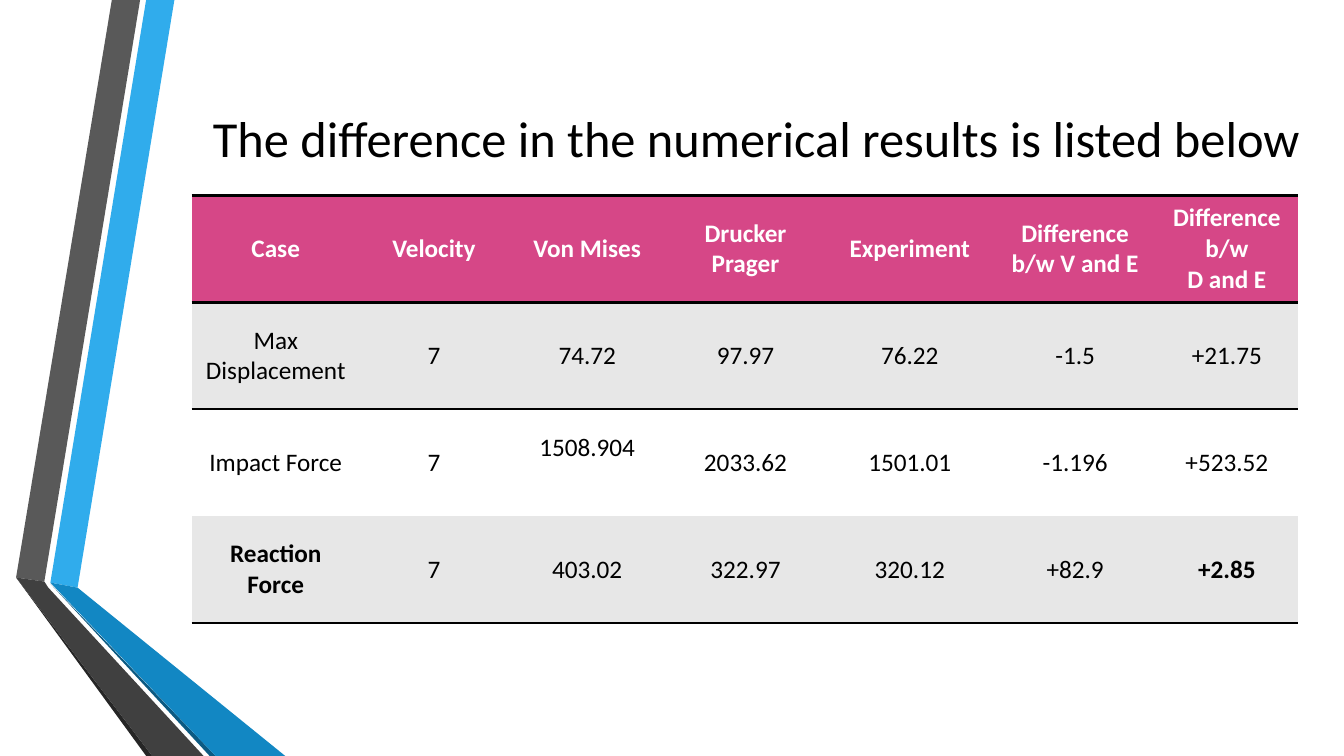
"""Build the slide comparing the numerical results of both models with the experiment."""
from dataclasses import dataclass

from lxml.etree import SubElement
from pptx import Presentation
from pptx.dml.color import RGBColor
from pptx.dml.fill import FillFormat
from pptx.enum.text import MSO_ANCHOR, MSO_AUTO_SIZE, PP_ALIGN
from pptx.oxml.ns import qn
from pptx.slide import Slide
from pptx.table import Table, _Cell
from pptx.text.text import _Paragraph
from pptx.util import Inches, Pt

FONT = "Calibri"
BLACK, WHITE, PINK, GREY = "000000", "FFFFFF", "D64787", "E7E7E7"
NO_GRID_STYLE = "{2D5ABB26-0587-4C30-8999-92F81FD0307C}"


@dataclass(frozen=True)
class Ribbon:
    color: str
    corners: tuple[tuple[float, float], ...]


@dataclass(frozen=True)
class ResultRow:
    texts: tuple[str, ...]
    fill: str
    color: str = BLACK
    bold_columns: tuple[int, ...] = ()
    borders: tuple[str, ...] = ()


RIBBONS = (
    Ribbon("30ACEC", ((0.5, 5.78), (0.77, 5.83), (1.73, 0), (1.45, 0))),
    Ribbon("595959", ((1.39, 0), (1.11, 0), (0.16, 5.73), (0.44, 5.77))),
    Ribbon("262626", ((0.16, 5.73), (1.45, 7.5), (1.51, 7.5))),
    Ribbon("0C5A82", ((0.5, 5.79), (2.08, 7.5), (2.14, 7.5))),
    Ribbon("1287C3", ((0.5, 5.78), (2.14, 7.5), (2.83, 7.5), (0.77, 5.83))),
    Ribbon("404040", ((2.02, 7.5), (0.48, 5.83), (0.44, 5.77), (0.16, 5.73), (1.51, 7.5))),
)

COLUMN_WIDTHS = (1.67, 1.47, 1.57, 1.57, 1.69, 1.59, 1.42)
ROW_HEIGHT = 1.06
RESULTS = (
    ResultRow(
        ("Case", "Velocity", "Von Mises", "Drucker Prager", "Experiment",
         "Difference b/w V and E", "Difference b/w\nD and E"),
        PINK, WHITE, tuple(range(7)), ("lnT", "lnB"),
    ),
    ResultRow(
        ("Max Displacement", "7", "74.72", "97.97", "76.22", "-1.5", "+21.75"),
        GREY, borders=("lnT",),
    ),
    ResultRow(
        ("Impact Force", "7", "1508.904", "2033.62", "1501.01", "-1.196", "+523.52"),
        WHITE,
    ),
    ResultRow(
        ("Reaction Force", "7", "403.02", "322.97", "320.12", "+82.9", "+2.85"),
        GREY, bold_columns=(0, 6), borders=("lnB",),
    ),
)


def paint(fill: FillFormat, color: str) -> None:
    fill.solid()
    fill.fore_color.rgb = RGBColor.from_string(color)


def write(paragraph: _Paragraph, text: str, size: int, color: str, bold: bool = False) -> None:
    paragraph.alignment = PP_ALIGN.CENTER
    for number, line in enumerate(text.split("\n")):
        if number:
            paragraph.add_line_break()
        run = paragraph.add_run()
        run.text = line
        run.font.name = FONT
        run.font.size = Pt(size)
        run.font.bold = bold
        paint(run.font.fill, color)


def draw_ribbon(slide: Slide, ribbon: Ribbon) -> None:
    first, *others = [(Inches(x), Inches(y)) for x, y in ribbon.corners]
    outline = slide.shapes.build_freeform(*first)
    outline.add_line_segments(others, close=True)
    band = outline.convert_to_shape()
    paint(band.fill, ribbon.color)
    band.line.fill.background()
    band.shadow.inherit = False


def add_title(slide: Slide) -> None:
    title = slide.shapes.title
    title.left, title.top = Inches(1.91), Inches(0.4)
    title.width, title.height = Inches(11.19), Inches(1.92)
    frame = title.text_frame
    frame.auto_size = MSO_AUTO_SIZE.NONE
    frame.word_wrap = True
    frame.vertical_anchor = MSO_ANCHOR.MIDDLE
    write(frame.paragraphs[0],
          "The difference in the numerical results is listed below", 36, BLACK)


def add_border(cell: _Cell, side: str) -> None:
    border = SubElement(cell._tc.get_or_add_tcPr(), qn(f"a:{side}"), w=str(Pt(2)))
    solid = SubElement(border, qn("a:solidFill"))
    SubElement(solid, qn("a:srgbClr"), val=BLACK)


def fill_row(table: Table, index: int, result: ResultRow) -> None:
    table.rows[index].height = Inches(ROW_HEIGHT)
    for column, text in enumerate(result.texts):
        cell = table.cell(index, column)
        for side in result.borders:
            add_border(cell, side)
        paint(cell.fill, result.fill)
        cell.vertical_anchor = MSO_ANCHOR.MIDDLE
        write(cell.text_frame.paragraphs[0], text, 18, result.color,
              column in result.bold_columns)


def add_results(slide: Slide) -> None:
    table = slide.shapes.add_table(
        len(RESULTS), len(COLUMN_WIDTHS), Inches(1.9), Inches(1.94),
        Inches(sum(COLUMN_WIDTHS)), Inches(ROW_HEIGHT * len(RESULTS)),
    ).table
    table.first_row = table.horz_banding = False
    table._tbl.tblPr.find(qn("a:tableStyleId")).text = NO_GRID_STYLE
    for column, width in zip(table.columns, COLUMN_WIDTHS):
        column.width = Inches(width)
    for index, result in enumerate(RESULTS):
        fill_row(table, index, result)
    raised_impact_force = table.cell(2, 2)
    raised_impact_force.margin_bottom = Inches(0.35)


def main() -> None:
    presentation = Presentation()
    presentation.slide_width, presentation.slide_height = Inches(13.33), Inches(7.5)
    slide = presentation.slides.add_slide(presentation.slide_layouts[5])
    for ribbon in RIBBONS:
        draw_ribbon(slide, ribbon)
    add_title(slide)
    add_results(slide)
    presentation.save("out.pptx")


if __name__ == "__main__":
    main()
